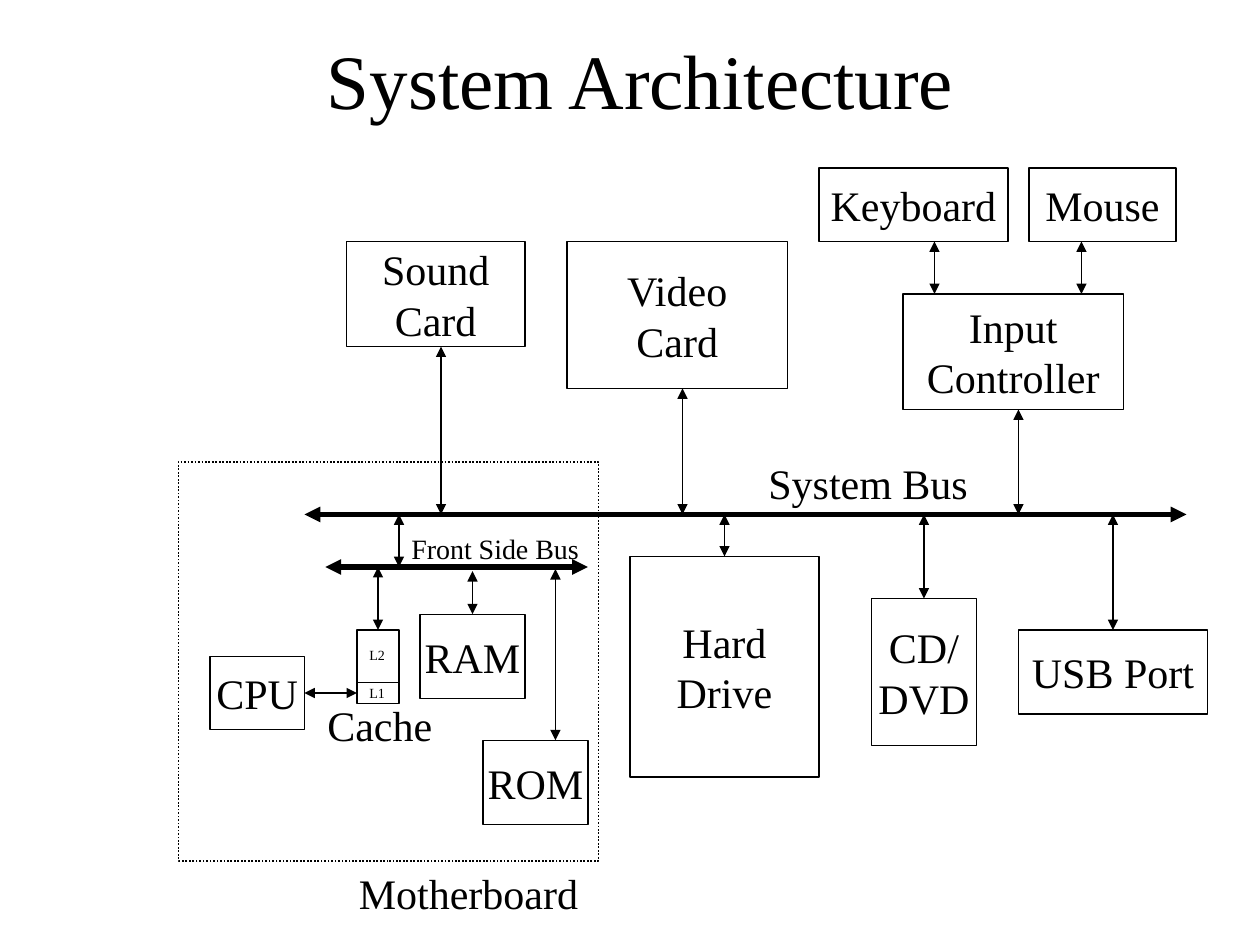
from typing import NamedTuple

from pptx import Presentation
from pptx.dml.color import RGBColor
from pptx.enum.dml import MSO_LINE as Dash
from pptx.enum.shapes import MSO_CONNECTOR as Conn, MSO_SHAPE as Kind
from pptx.enum.text import MSO_ANCHOR as Anchor, MSO_AUTO_SIZE as Fit, PP_ALIGN as Align
from pptx.oxml.ns import qn
from pptx.util import Emu, Pt

SCALE = 7620
BLACK = RGBColor(0, 0, 0)
WHITE = RGBColor(255, 255, 255)
FONT = "Times New Roman"


class Box(NamedTuple):
    """A white device box with centred text."""
    text: str
    x: int
    y: int
    w: int
    h: int


class Label(NamedTuple):
    """A free line of text."""
    text: str
    x: int
    y: int
    w: int
    h: int
    size: int = 24


class Link(NamedTuple):
    """A straight line between two points."""
    x1: int
    y1: int
    x2: int
    y2: int
    width: float = 0.75
    heads: bool = True


BUS = 490
FRONT = 540

BOXES = [
    Box("CPU", 200, 625, 90, 70),
    Box("", 340, 600, 40, 70),
    Box("RAM", 400, 585, 100, 80),
    Box("ROM", 460, 705, 100, 80),
    Box("Hard\nDrive", 600, 530, 180, 210),
    Box("CD/\nDVD", 830, 570, 100, 140),
    Box("USB Port", 970, 600, 180, 80),
    Box("Sound\nCard", 330, 230, 170, 100),
    Box("Video\nCard", 540, 230, 210, 140),
    Box("Input\nController", 860, 280, 210, 110),
    Box("Keyboard", 780, 160, 180, 70),
    Box("Mouse", 980, 160, 140, 70),
]

LINKS = [
    Link(1130, BUS, 290, BUS, 3),
    Link(560, FRONT, 310, FRONT, 3),
    Link(340, 650, 380, 650, heads=False),
    Link(290, 660, 340, 660),
    Link(380, BUS, 380, FRONT),
    Link(360, FRONT, 360, 600),
    Link(450, 585, 450, 544),
    Link(529, 705, 529, 542),
    Link(690, 530, 690, BUS),
    Link(880, 570, 880, BUS),
    Link(1060, 600, 1060, BUS),
    Link(420, BUS, 420, 330),
    Link(650, BUS, 650, 370),
    Link(970, BUS, 970, 390),
    Link(890, 280, 890, 230),
    Link(1030, 280, 1030, 230),
]

LABELS = [
    Label("Cache", 300, 660, 124, 60),
    Label("Motherboard", 330, 820, 233, 60),
    Label("System Bus", 720, 430, 214, 60),
    Label("Front Side Bus", 380, 500, 185, 44, 16),
    Label("L1", 340, 646, 40, 28, 8),
    Label("L2", 340, 610, 40, 28, 8),
]


def px(*nums: int) -> list[Emu]:
    """Turn px into EMU."""
    return [Emu(n * SCALE) for n in nums]


def write(shape, text: str, *, size: int = 24, align=Align.CENTER,
          anchor=Anchor.MIDDLE, wrap: bool = False, fit=Fit.NONE) -> None:
    """Fill a shape with formatted text."""
    frame = shape.text_frame
    frame.text = text
    frame.word_wrap = wrap
    frame.auto_size = fit
    frame.vertical_anchor = anchor
    for para in frame.paragraphs:
        para.alignment = align
        for run in para.runs:
            run.font.name = FONT
            run.font.size = Pt(size)
            run.font.color.rgb = BLACK


def stroke(line, width: float) -> None:
    """Give a line its colour and width."""
    line.color.rgb = BLACK
    line.width = Pt(width)


def add_box(shapes, box: Box) -> None:
    """Draw a device box."""
    shape = shapes.add_shape(Kind.RECTANGLE, *px(*box[1:]))
    shape.shadow.inherit = False
    shape.fill.solid()
    shape.fill.fore_color.rgb = WHITE
    stroke(shape.line, 0.75)
    if box.text:
        write(shape, box.text)


def add_link(shapes, link: Link) -> None:
    """Draw a line, with arrowheads at both ends if asked."""
    conn = shapes.add_connector(Conn.STRAIGHT, *px(*link[:4]))
    stroke(conn.line, link.width)
    props = conn._element.spPr
    if link.heads:
        for tag in ("a:headEnd", "a:tailEnd"):
            end = props.ln.makeelement(qn(tag), {"type": "triangle"})
            props.ln.append(end)
    props.append(props.makeelement(qn("a:effectLst"), {}))


def add_label(shapes, label: Label) -> None:
    """Place a line of text."""
    shape = shapes.add_textbox(*px(*label[1:5]))
    write(shape, label.text, size=label.size, align=Align.LEFT,
          anchor=Anchor.TOP, fit=Fit.SHAPE_TO_FIT_TEXT)


def add_frame(shapes) -> None:
    """Draw the dotted outline of the motherboard."""
    shape = shapes.add_shape(Kind.RECTANGLE, *px(170, 440, 400, 380))
    shape.shadow.inherit = False
    shape.fill.background()
    stroke(shape.line, 1)
    shape.line.dash_style = Dash.ROUND_DOT


def main() -> None:
    """Build the slide and save it."""
    deck = Presentation()
    deck.slide_width, deck.slide_height = px(1200, 900)
    shapes = deck.slides.add_slide(deck.slide_layouts[5]).shapes
    title = shapes.title
    title.left, title.top, title.width, title.height = px(100, 0, 1020, 150)
    write(title, "System Architecture", size=44, wrap=True)
    for box in BOXES:
        add_box(shapes, box)
    add_frame(shapes)
    for link in LINKS:
        add_link(shapes, link)
    for label in LABELS:
        add_label(shapes, label)
    deck.save("out.pptx")


if __name__ == "__main__":
    main()
